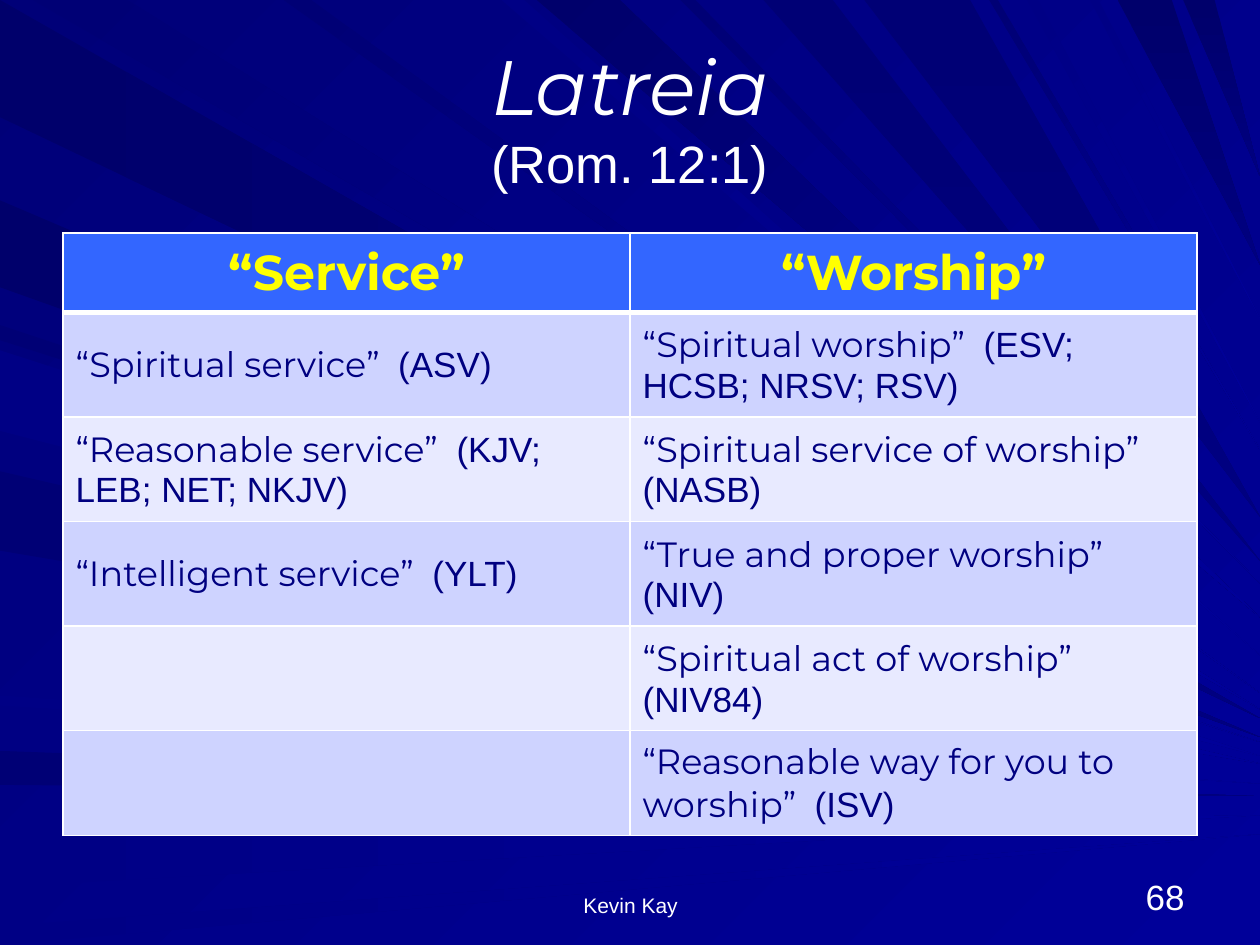
from lxml import etree
from pptx import Presentation
from pptx.dml.color import RGBColor
from pptx.enum.text import MSO_ANCHOR, MSO_AUTO_SIZE, PP_ALIGN
from pptx.oxml.ns import qn
from pptx.util import Inches, Pt

MIDDLE, BOTTOM = MSO_ANCHOR.MIDDLE, MSO_ANCHOR.BOTTOM
LEFT, CENTER, RIGHT = PP_ALIGN.LEFT, PP_ALIGN.CENTER, PP_ALIGN.RIGHT
NO_AUTOFIT = MSO_AUTO_SIZE.NONE

HEADING_FONT, PLAIN_FONT = "Montserrat", "Arial"
WHITE, YELLOW, NAVY = "FFFFFF", "FFFF00", "000080"
HEADER_BLUE, BANDS = "3366FF", ("CED3FF", "E8EAFF")
DARK, DEEP, MEDIUM, BRIGHT = "00006B", "000075", "000085", "000099"
SLIDE_WIDTH, SLIDE_HEIGHT = 10, 7.5

# Rays from the left edge: start and end on the edge, height of the tip, colours
LEFT_RAYS = [
    (0, 0.93, 5.7, DARK, NAVY),
    (5.96, 6.23, 6.32, DEEP, NAVY),
    (6.65, 7.04, 6.47, MEDIUM, BRIGHT),
    (7.35, 7.5, 6.62, MEDIUM, BRIGHT),
    (2.58, 2.7, 5.89, DEEP, BRIGHT),
    (1.59, 2.28, 5.85, DARK, NAVY),
    (2.78, 3.42, 6, MEDIUM, BRIGHT),
    (3.74, 4.37, 6.06, DEEP, BRIGHT),
    (5.52, 5.6, 6.22, MEDIUM, BRIGHT),
]
# Rays from the top edge, in the same order of values
TOP_RAYS = [
    (0.26, 1.01, 5.63, DEEP, BRIGHT),
    (2.25, 2.47, 5.5, DEEP, BRIGHT),
    (3.98, 4.16, 5.2, MEDIUM, BRIGHT),
    (4.26, 4.92, 4.9, DARK, BRIGHT),
    (5.4, 5.52, 4.63, DEEP, BRIGHT),
    (6.06, 6.61, 4.45, DEEP, NAVY),
    (6.86, 7.7, 4.1, DEEP, NAVY),
    (7.85, 7.92, 3.57, DEEP, BRIGHT),
    (8.15, 8.24, 3.35, MEDIUM, BRIGHT),
    (8.65, 8.72, 2.53, MEDIUM, BRIGHT),
    (8.87, 9.3, 2.1, DARK, NAVY),
    (9.39, 9.64, 1.4, DARK, NAVY),
]

HEADERS = ("“Service”", "“Worship”")
# Each cell: rendering, translations that use it
RENDERINGS = [
    (("“Spiritual service”  ", "(ASV)"), ("“Spiritual worship”  ", "(ESV; HCSB; NRSV; RSV)")),
    (("“Reasonable service”  ", "(KJV; LEB; NET; NKJV)"), ("“Spiritual service of worship”  ", "(NASB)")),
    (("“Intelligent service”  ", "(YLT)"), ("“True and proper worship”  ", "(NIV)")),
    (None, ("“Spiritual act of worship”  ", "(NIV84)")),
    (None, ("“Reasonable way for you to worship”  ", "(ISV)")),
]


def rgb(color):
    return RGBColor.from_string(color)


def set_gradient(fill, colors, angle):
    """Fill with a two-colour gradient turned clockwise by angle."""
    fill.gradient()
    fill.gradient_angle = -angle % 360
    for stop, color in zip(fill.gradient_stops, colors):
        stop.color.rgb = rgb(color)


def set_font(font, name, size, color, bold=False, italic=False):
    font.name, font.size, font.color.rgb = name, Pt(size), rgb(color)
    font.bold, font.italic = bold, italic


def add_run(paragraph, text, *font_settings, **styles):
    run = paragraph.add_run()
    run.text = text
    set_font(run.font, *font_settings, **styles)


def add_ray(group, corners, tip_height, colors, angle):
    points = [(Inches(x), Inches(y)) for x, y in (*corners, (SLIDE_WIDTH, tip_height))]
    builder = group.shapes.build_freeform(*points[0])
    builder.add_line_segments(points[1:], close=True)
    ray = builder.convert_to_shape()
    ray.shadow.inherit = False
    ray.line.fill.background()
    set_gradient(ray.fill, colors, angle)


def add_background(slide):
    set_gradient(slide.background.fill, ("000078", BRIGHT), 45)
    group = slide.shapes.add_group_shape()
    for start, end, tip_height, *colors in LEFT_RAYS:
        add_ray(group, ((0, start), (0, end)), tip_height, colors, 0)
    for start, end, tip_height, *colors in TOP_RAYS:
        angle = 90 if NAVY in colors else 45
        add_ray(group, ((start, 0), (end, 0)), tip_height, colors, angle)
    # Send the rays behind the title
    slide.shapes._spTree.insert(2, group._element)


def add_title(slide):
    title = slide.shapes.title
    title.left, title.top = Inches(0.5), Inches(0.3)
    title.width, title.height = Inches(9), Inches(1.25)
    frame = title.text_frame
    frame.auto_size, frame.vertical_anchor = NO_AUTOFIT, MIDDLE
    paragraph = frame.paragraphs[0]
    paragraph.alignment = CENTER
    add_run(paragraph, "Latreia", HEADING_FONT, 44, WHITE, italic=True)
    paragraph.add_line_break()
    add_run(paragraph, "(Rom. 12:1)", PLAIN_FONT, 30, WHITE)


def set_borders(cell, top, bottom):
    properties = cell._tc.get_or_add_tcPr()
    for side, width in (("L", 1), ("R", 1), ("T", top), ("B", bottom)):
        line = etree.SubElement(properties, qn(f"a:ln{side}"), w=str(Pt(width)))
        fill = etree.SubElement(line, qn("a:solidFill"))
        etree.SubElement(fill, qn("a:srgbClr"), val=WHITE)


def add_renderings_table(slide):
    row_count = len(RENDERINGS) + 1
    frame = slide.shapes.add_table(row_count, 2, Inches(0.5), Inches(1.85), Inches(9), Inches(4.78))
    table = frame.table
    table.first_row = table.horz_banding = False
    for row_index, row in enumerate(table.rows):
        is_header = row_index == 0
        row.height = Inches(0.63 if is_header else 0.83)
        color = HEADER_BLUE if is_header else BANDS[(row_index - 1) % 2]
        for column_index, cell in enumerate(row.cells):
            set_borders(cell, 3 if row_index == 1 else 1, 3 if is_header else 1)
            cell.fill.solid()
            cell.fill.fore_color.rgb = rgb(color)
            cell.vertical_anchor = MIDDLE
            paragraph = cell.text_frame.paragraphs[0]
            if is_header:
                paragraph.alignment = CENTER
                add_run(paragraph, HEADERS[column_index], HEADING_FONT, 28, YELLOW, bold=True)
                continue
            paragraph.alignment = LEFT
            rendering = RENDERINGS[row_index - 1][column_index]
            if rendering:
                for text, font_name in zip(rendering, (HEADING_FONT, PLAIN_FONT)):
                    add_run(paragraph, text, font_name, 20, NAVY)


def add_footer(slide, text, left, width, size, alignment):
    box = slide.shapes.add_textbox(Inches(left), Inches(6.83), Inches(width), Inches(0.5))
    frame = box.text_frame
    frame.word_wrap, frame.vertical_anchor = True, BOTTOM
    paragraph = frame.paragraphs[0]
    paragraph.text, paragraph.alignment = text, alignment
    set_font(paragraph.font, PLAIN_FONT, size, WHITE)


def main():
    presentation = Presentation()
    presentation.slide_width, presentation.slide_height = Inches(SLIDE_WIDTH), Inches(SLIDE_HEIGHT)
    slide = presentation.slides.add_slide(presentation.slide_layouts[5])

    # Background and content
    add_background(slide)
    add_title(slide)
    add_renderings_table(slide)

    # Footer
    add_footer(slide, "Kevin Kay", 3.42, 3.17, 12, CENTER)
    add_footer(slide, "68", 7.17, 2.33, 20, RIGHT)

    presentation.save("out.pptx")


if __name__ == "__main__":
    main()
